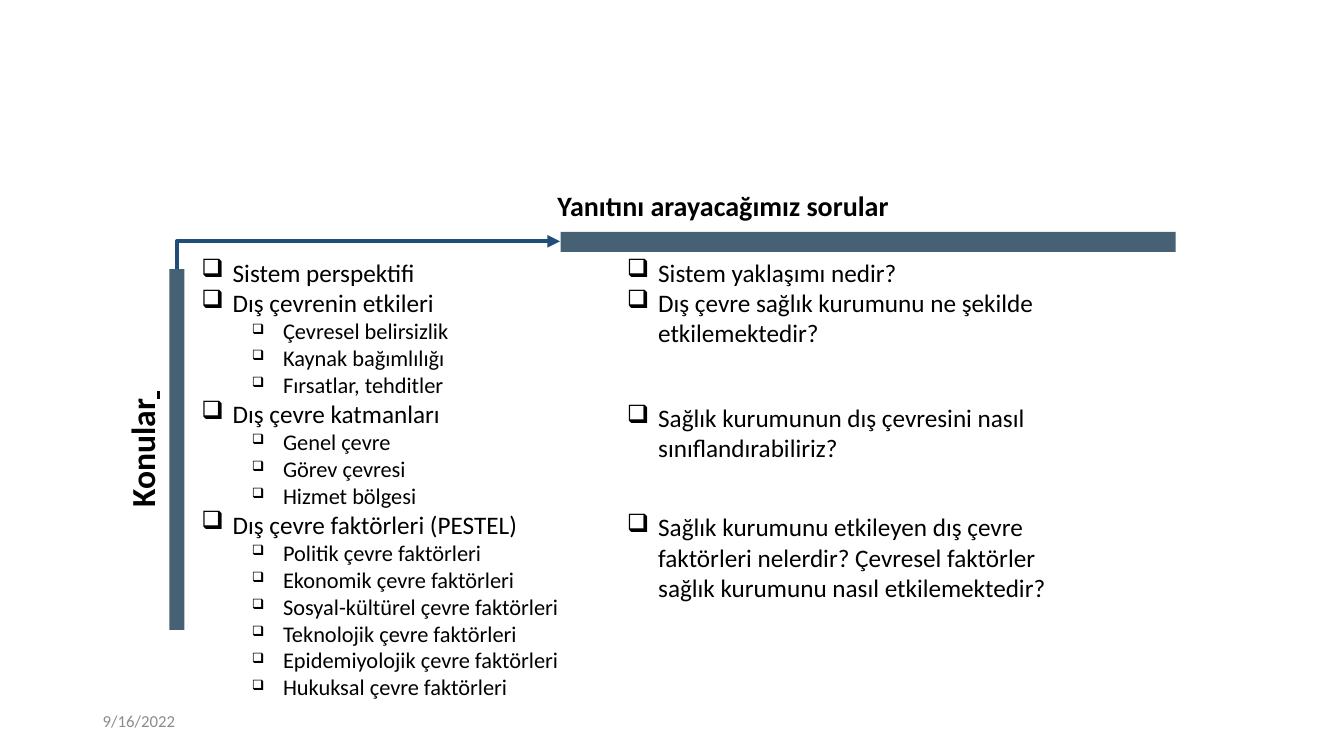
from lxml import etree
from pptx import Presentation
from pptx.dml.color import RGBColor
from pptx.enum.shapes import MSO_CONNECTOR, MSO_SHAPE
from pptx.enum.text import MSO_ANCHOR, MSO_AUTO_SIZE, PP_ALIGN
from pptx.oxml.ns import qn
from pptx.util import Inches, Pt

RECTANGLE = MSO_SHAPE.RECTANGLE
ELBOW = MSO_CONNECTOR.ELBOW
MIDDLE = MSO_ANCHOR.MIDDLE
GROW = MSO_AUTO_SIZE.SHAPE_TO_FIT_TEXT
CENTER = PP_ALIGN.CENTER

FONT = "Calibri"
BLACK = RGBColor(0x00, 0x00, 0x00)
GRAY = RGBColor(0x8C, 0x8C, 0x8C)
SLATE = RGBColor(0x45, 0x61, 0x73)
NAVY = RGBColor(0x1F, 0x4E, 0x79)

# (level, text, space before in points)
TOPICS = [
    (0, "Sistem perspektifi", 0),
    (0, "Dış çevrenin etkileri", 0),
    (1, "Çevresel belirsizlik", 0),
    (1, "Kaynak bağımlılığı", 0),
    (1, "Fırsatlar, tehditler", 0),
    (0, "Dış çevre katmanları", 0),
    (1, "Genel çevre", 0),
    (1, "Görev çevresi", 0),
    (1, "Hizmet bölgesi", 0),
    (0, "Dış çevre faktörleri (PESTEL)", 0),
    (1, "Politik çevre faktörleri", 0),
    (1, "Ekonomik çevre faktörleri", 0),
    (1, "Sosyal-kültürel çevre faktörleri", 0),
    (1, "Teknolojik çevre faktörleri", 0),
    (1, "Epidemiyolojik çevre faktörleri", 0),
    (1, "Hukuksal çevre faktörleri", 0),
]
QUESTIONS = [
    (0, "Sistem yaklaşımı nedir?", 0),
    (0, "Dış çevre sağlık kurumunu ne şekilde etkilemektedir?", 0),
    (0, "Sağlık kurumunun dış çevresini nasıl sınıflandırabiliriz?", 39),
    (0, "Sağlık kurumunu etkileyen dış çevre faktörleri nelerdir? "
        "Çevresel faktörler sağlık kurumunu nasıl etkilemektedir?", 35),
]


def format_run(run, size, color=BLACK, bold=False):
    run.font.name = FONT
    run.font.size = Pt(size)
    run.font.bold = bold
    run.font.color.rgb = color


def add_frame(slide, left, top, width, height):
    """Add a wrapping text box and return it."""
    box = slide.shapes.add_textbox(
        Inches(left), Inches(top), Inches(width), Inches(height))
    box.text_frame.word_wrap = True
    return box


def add_label(slide, text, left, top, width, height, size, color=BLACK, bold=False):
    label = add_frame(slide, left, top, width, height)
    label.text_frame.text = text
    format_run(label.text_frame.paragraphs[0].runs[0], size, color, bold)
    return label


def add_bar(slide, left, top, width, height):
    bar = slide.shapes.add_shape(
        RECTANGLE, Inches(left), Inches(top), Inches(width), Inches(height))
    bar.shadow.inherit = False
    bar.fill.solid()
    bar.fill.fore_color.rgb = SLATE
    bar.line.fill.background()


def add_bullet(paragraph, level):
    """Give the paragraph a hanging box bullet, smaller on the second level."""
    paragraph.level = level
    properties = paragraph._p.get_or_add_pPr()
    properties.set("marL", str(Inches(0.31 + 0.5 * level)))
    properties.set("indent", str(-Inches(0.31)))
    if level:
        etree.SubElement(properties, qn("a:buSzPct")).set("val", "63000")
    etree.SubElement(properties, qn("a:buChar")).set("char", "❑")


def add_list(slide, items, left, top, width, height):
    frame = add_frame(slide, left, top, width, height).text_frame
    frame.auto_size = GROW
    frame.text = "\n".join(text for _, text, _ in items)
    for paragraph, (level, _, gap) in zip(frame.paragraphs, items):
        paragraph.space_before = Pt(gap)
        add_bullet(paragraph, level)
        format_run(paragraph.runs[0], 16 if level else 18)


def add_corner_arrow(slide):
    """Lead from the topics bar up and then right to the questions bar."""
    arrow = slide.shapes.add_connector(
        ELBOW, Inches(3.79), Inches(4.43), Inches(3.52), Inches(0.63))
    arrow.rotation = 90 if hasattr(arrow, "rotation") else 0
    arrow.line.color.rgb = NAVY
    arrow.line.width = Pt(3)
    properties = arrow._element.spPr
    properties.find(qn("a:xfrm")).set("rot", str(90 * 60000))
    properties.find(qn("a:prstGeom")).set("prst", "bentConnector2")
    outline = properties.find(qn("a:ln"))
    etree.SubElement(outline, qn("a:tailEnd")).set("type", "triangle")
    etree.SubElement(properties, qn("a:effectLst"))


def add_topics_heading(slide):
    heading = add_label(slide, "Konular", -0.34, 4.17, 3.57, 0.58, 24, bold=True)
    heading.rotation = 270
    heading.text_frame.auto_size = GROW
    paragraph = heading.text_frame.paragraphs[0]
    paragraph.alignment = CENTER
    underlined_space = paragraph.add_run()
    underlined_space.text = " "
    format_run(underlined_space, 24, bold=True)
    underlined_space.font.underline = True


def main():
    presentation = Presentation()
    presentation.slide_width = Inches(13.33)
    presentation.slide_height = Inches(7.5)
    slide = presentation.slides.add_slide(presentation.slide_layouts[6])

    date = add_label(slide, "9/16/2022", 0.92, 6.95, 3, 0.4, 12, GRAY)
    date.text_frame.vertical_anchor = MIDDLE

    add_topics_heading(slide)
    add_bar(slide, 1.68, 2.67, 0.15, 3.58)
    add_bar(slide, 5.56, 2.3, 6.1, 0.2)
    questions_heading = add_label(
        slide, "Yanıtını arayacağımız sorular", 5.43, 1.82, 3.81, 0.44, 20, bold=True)
    questions_heading.text_frame.auto_size = GROW
    add_corner_arrow(slide)

    add_list(slide, TOPICS, 1.9, 2.5, 4.46, 4.54)
    add_list(slide, QUESTIONS, 6.12, 2.5, 4.46, 3.67)

    presentation.save("out.pptx")


if __name__ == "__main__":
    main()
